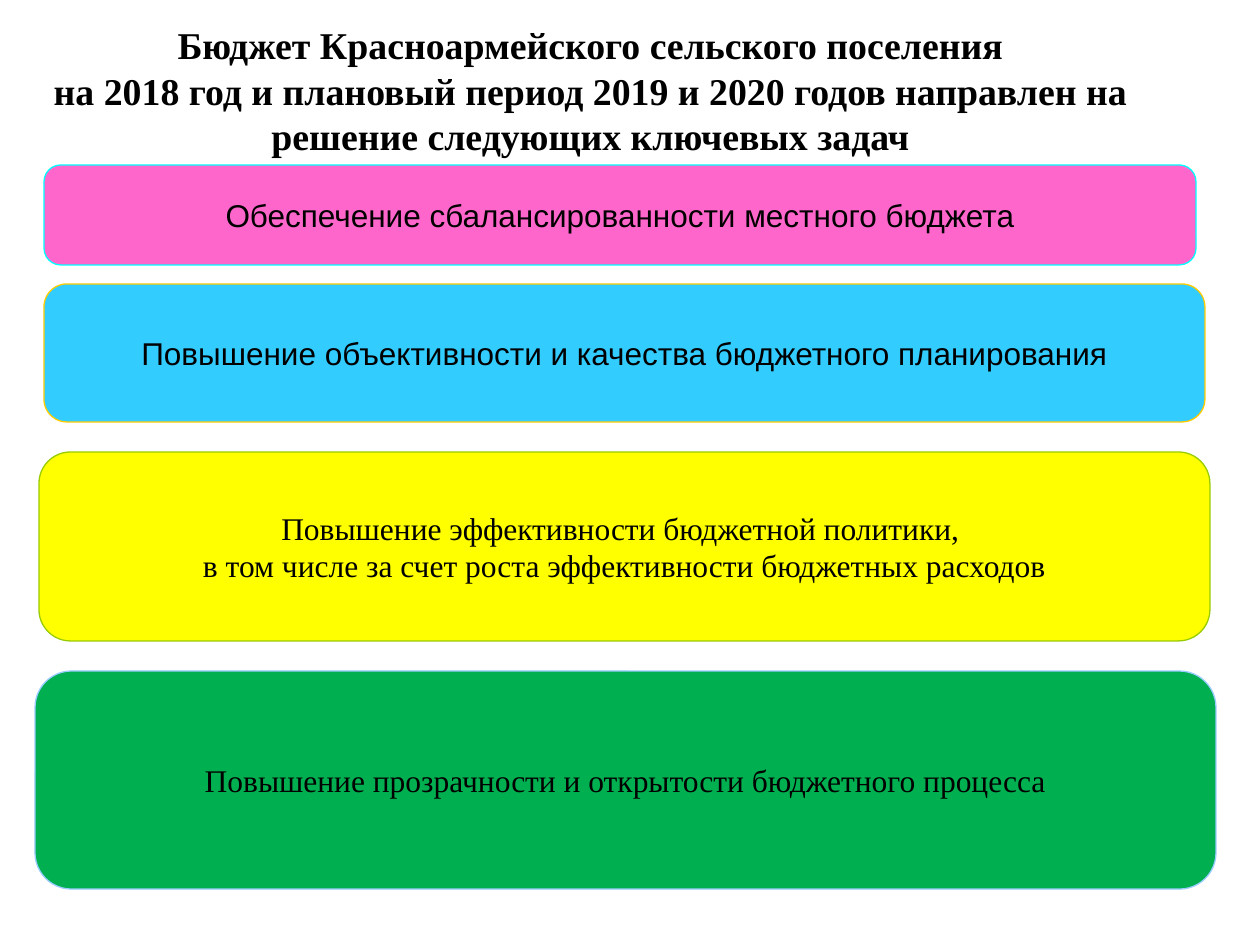
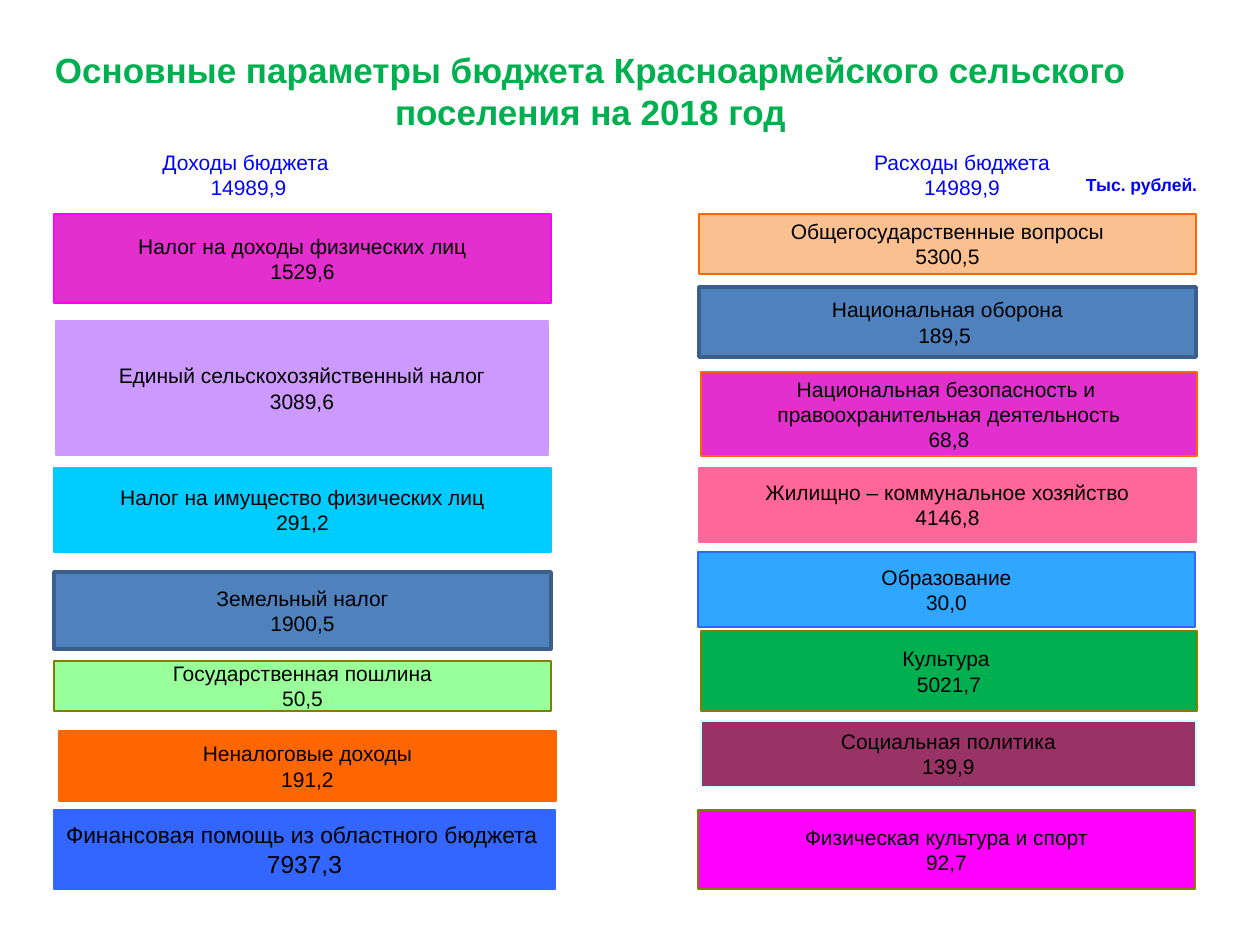
from pptx import Presentation
from pptx import util as u
from pptx.dml.color import RGBColor
from pptx.enum import shapes, text

PX = 914400 / 126  # EMU in one px
SERIF, SANS = "Times New Roman", "Arial"

COLORS = {
    "black": "000000", "white": "FFFFFF", "blue": "0000FF", "green": "00B050",
    "pink": "FF66CC", "cyan": "00FFFF", "sky": "33CCFF", "gold": "FFCC00",
    "yellow": "FFFF00", "lime": "99CC00", "pale blue": "99CCFF",
    "purple": "E32FCE", "magenta": "FF00FF", "lilac": "CC99FF",
    "aqua": "00CCFF", "steel": "4F81BD", "dark steel": "3A5F8C",
    "mint": "99FF99", "olive": "808000", "orange": "FF6600",
    "royal": "3366FF", "peach": "FAC090", "rose": "FF6699",
    "azure": "2FA6FF", "plum": "993366", "ice": "CCFFFF",
}

# Tasks: left, top, width, height, fill, line, font, text
TASKS = [
    (44, 165, 1152, 100, "pink", "cyan", SANS,
     "Обеспечение сбалансированности местного бюджета"),
    (44, 284, 1161, 138, "sky", "gold", SANS,
     "Повышение объективности и качества бюджетного планирования"),
    (39, 452, 1171, 189, "yellow", "lime", SERIF,
     "Повышение эффективности бюджетной политики, \n"
     "в том числе за счет роста эффективности бюджетных расходов"),
    (35, 671, 1181, 218, "green", "pale blue", SERIF,
     "Повышение прозрачности и открытости бюджетного процесса"),
]

# Budget items: left, top, width, height, fill, line, text
INCOME = [
    (54, 214, 497, 89, "purple", "magenta", "Налог на доходы физических лиц\n1529,6"),
    (56, 321, 492, 134, "lilac", "lilac", "Единый сельскохозяйственный налог\n3089,6"),
    (54, 468, 497, 84, "aqua", "aqua", "Налог на имущество физических лиц\n291,2"),
    (54, 572, 497, 77, "steel", "dark steel", "Земельный налог\n1900,5"),
    (54, 661, 497, 50, "mint", "olive", "Государственная пошлина\n50,5"),
    (59, 731, 497, 70, "orange", "orange", "Неналоговые доходы\n191,2"),
]
EXPENSES = [
    (699, 214, 497, 60, "peach", "orange", "Общегосударственные вопросы\n5300,5"),
    (699, 287, 497, 70, "steel", "dark steel", "Национальная оборона\n189,5 "),
    (701, 372, 496, 84, "purple", "orange",
     "Национальная безопасность и \nправоохранительная деятельность\n68,8"),
    (699, 468, 497, 74, "rose", "rose", "Жилищно – коммунальное хозяйство\n4146,8"),
    (698, 552, 497, 75, "azure", "royal", "Образование\n30,0"),
    (701, 631, 496, 80, "green", "olive", "Культура \n5021,7"),
    (701, 721, 495, 66, "plum", "ice", "Социальная политика\n139,9"),
    (698, 810, 497, 79, "magenta", "olive", "Физическая культура и спорт\n92,7"),
]


def px(*lengths):
    return [u.Emu(round(n * PX)) for n in lengths]


def rgb(name):
    return RGBColor.from_string(COLORS[name])


def write(tf, content, *, sizes=(12,), font=SANS, color="black", bold=False, wrap=False):
    """Fill a frame with centred paragraphs; the last size serves all further lines."""
    tf.word_wrap = wrap
    tf.vertical_anchor = text.MSO_ANCHOR.MIDDLE
    for i, line in enumerate(content.split("\n")):
        p = tf.paragraphs[0] if i == 0 else tf.add_paragraph()
        p.alignment = text.PP_ALIGN.CENTER
        r = p.add_run()
        r.text = line
        r.font.name, r.font.bold = font, bold
        r.font.size = u.Pt(sizes[min(i, len(sizes) - 1)])
        r.font.color.rgb = rgb(color)


def add_title(s, content, **fmt):
    tf = s.shapes.add_textbox(*px(0, 35, 1181, 110)).text_frame
    write(tf, content, bold=True, wrap=True, **fmt)


def add_box(s, box, fill, line, content, rounded=False, **fmt):
    kind = shapes.MSO_SHAPE.ROUNDED_RECTANGLE if rounded else shapes.MSO_SHAPE.RECTANGLE
    sp = s.shapes.add_shape(kind, *px(*box))
    sp.shadow.inherit = False
    if fill:
        sp.fill.solid()
        sp.fill.fore_color.rgb = rgb(fill)
    else:
        sp.fill.background()
    sp.line.color.rgb = rgb(line)
    sp.line.width = u.Pt(2 if line == "dark steel" else 0.75)
    write(sp.text_frame, content, **fmt)


def add_tasks_slide(s):
    add_title(s, "Бюджет Красноармейского сельского поселения\n"
                 "на 2018 год и плановый период 2019 и 2020 годов направлен на "
                 "решение следующих ключевых задач", sizes=(21.6,), font=SERIF)
    for *box, fill, line, font, content in TASKS:
        add_box(s, box, fill, line, content, rounded=True, sizes=(18,), font=font)


def add_parameters_slide(s):
    add_title(s, "Основные параметры бюджета Красноармейского сельского "
                 "поселения на 2018 год", sizes=(20,), color="green")
    # Column heads and unit
    add_box(s, (105, 145, 287, 59), "white", "white", "Доходы бюджета \n14989,9", color="blue")
    add_box(s, (828, 145, 268, 59), "white", "white", "Расходы бюджета\n14989,9", color="blue")
    add_box(s, (1067, 165, 149, 40), None, "white", "Тыс. рублей.",
            sizes=(10,), color="blue", bold=True)
    # Columns
    for *box, fill, line, content in INCOME + EXPENSES:
        add_box(s, box, fill, line, content)
    add_box(s, (54, 810, 501, 79), "royal", "royal",
            "Финансовая помощь из областного бюджета \n7937,3", sizes=(13, 14))


def main():
    prs = Presentation()
    prs.slide_width, prs.slide_height = px(1260, 945)
    for build in (add_tasks_slide, add_parameters_slide):
        build(prs.slides.add_slide(prs.slide_layouts[6]))
    prs.save("out.pptx")


if __name__ == "__main__":
    main()
